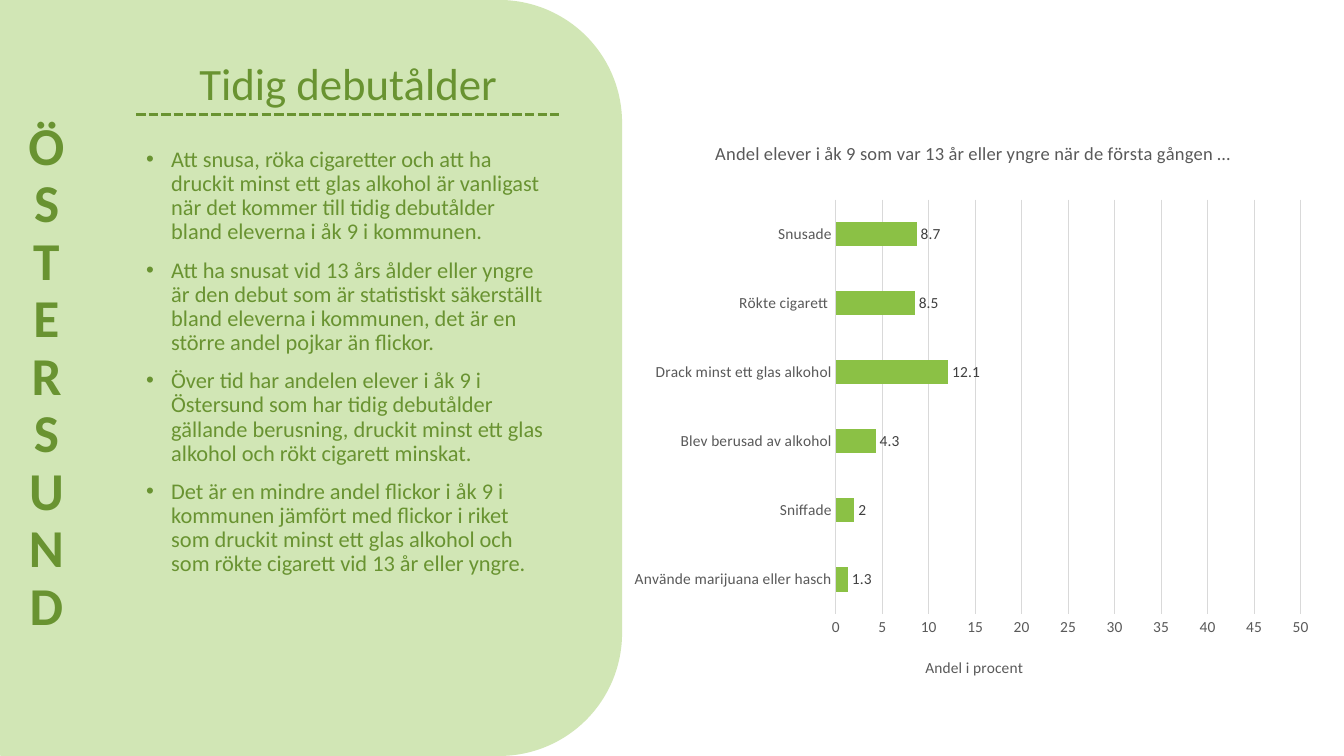
"""Build the slide about early debut age in Östersund."""
from dataclasses import dataclass

import pptx
import pptx.chart.data
import pptx.dml.color
import pptx.enum.chart
import pptx.enum.dml
import pptx.enum.shapes
import pptx.enum.text
import pptx.oxml
import pptx.oxml.ns
import pptx.util
from lxml import etree

PX = 9144
FONT = "Calibri"
COLOURS = {
    "panel": "D1E6B5",
    "text": "699331",
    "bar": "8BC145",
    "axis": "595959",
    "label": "404040",
    "grid": "D9D9D9",
}
BULLETS = [
    "Att snusa, röka cigaretter och att ha druckit minst ett glas alkohol är vanligast "
    "när det kommer till tidig debutålder bland eleverna i åk 9 i kommunen.",
    "Att ha snusat vid 13 års ålder eller yngre är den debut som är statistiskt säkerställt "
    "bland eleverna i kommunen, det är en större andel pojkar än flickor.",
    "Över tid har andelen elever i åk 9 i Östersund som har tidig debutålder gällande "
    "berusning, druckit minst ett glas alkohol och rökt cigarett minskat.",
    "Det är en mindre andel flickor i åk 9 i kommunen jämfört med flickor i riket som "
    "druckit minst ett glas alkohol och som rökte cigarett vid 13 år eller yngre.",
]
DEBUTS = {
    "Använde marijuana eller hasch": 1.3,
    "Sniffade": 2,
    "Blev berusad av alkohol": 4.3,
    "Drack minst ett glas alkohol": 12.1,
    "Rökte cigarett ": 8.5,
    "Snusade": 8.7,
}


@dataclass(frozen=True)
class Area:
    """A rectangle in px."""

    left: int
    top: int
    width: int = 0
    height: int = 0

    def emu(self) -> tuple[int, ...]:
        """Return left, top, width and height in EMU."""
        return tuple(n * PX for n in (self.left, self.top, self.width, self.height))


PANEL = Area(-114, 0, 731, 750)
TITLE = Area(158, 16, 375, 98)
BODY = Area(135, 142, 421, 519)
TOWN = Area(0, 6, 92, 738)
CHART = Area(616, 114, 697, 574)
PLOT = Area(829, 198, 461, 411)
CHART_TITLE = Area(706, 136)
AXIS_TITLE = Area(915, 649)


def colour(name: str) -> pptx.dml.color.RGBColor:
    """Look up a named colour."""
    return pptx.dml.color.RGBColor.from_string(COLOURS[name])


def style_font(font, size: float, name: str, bold: bool = False) -> None:
    """Set face, size, colour and weight."""
    font.name = FONT
    font.size = pptx.util.Pt(size)
    font.bold = bold
    font.color.rgb = colour(name)


def write(para, text: str, size: float, name: str, bold: bool = False) -> None:
    """Add one styled run to a paragraph."""
    span = para.add_run()
    span.text = text
    style_font(span.font, size, name, bold)


def add_panel(page) -> None:
    """Draw the rounded green panel behind the title."""
    panel = page.shapes.add_shape(pptx.enum.shapes.MSO_SHAPE.ROUNDED_RECTANGLE, *PANEL.emu())
    panel.shadow.inherit = False
    panel.fill.solid()
    panel.fill.fore_color.rgb = colour("panel")
    panel.line.fill.background()
    page.shapes.title.element.addprevious(panel.element)


def format_title(page) -> None:
    """Place and fill the title placeholder."""
    title = page.shapes.title
    title.left, title.top, title.width, title.height = TITLE.emu()
    frame = title.text_frame
    frame.auto_size = pptx.enum.text.MSO_AUTO_SIZE.NONE
    frame.vertical_anchor = pptx.enum.text.MSO_ANCHOR.BOTTOM
    para = frame.paragraphs[0]
    para.alignment = pptx.enum.text.PP_ALIGN.CENTER
    para.line_spacing = 0.9
    write(para, "Tidig debutålder", 32, "text")


def add_body(page) -> None:
    """Add the bulleted findings."""
    box = page.shapes.add_textbox(*BODY.emu())
    box.fill.solid()
    box.fill.fore_color.rgb = colour("panel")
    frame = box.text_frame
    frame.word_wrap = True
    for index, text in enumerate(BULLETS):
        para = frame.add_paragraph() if index else frame.paragraphs[0]
        para.line_spacing = 0.9
        para.space_before = pptx.util.Pt(10)
        write(para, text, 16, "text")
        properties = para._p.get_or_add_pPr()
        properties.set("marL", str(25 * PX))
        properties.set("indent", str(-25 * PX))
        etree.SubElement(properties, pptx.oxml.ns.qn("a:buFont"), typeface="Arial")
        etree.SubElement(properties, pptx.oxml.ns.qn("a:buChar"), char="•")


def add_town(page) -> None:
    """Add the town name with stacked letters."""
    box = page.shapes.add_textbox(*TOWN.emu())
    frame = box.text_frame
    frame.word_wrap = True
    frame.vertical_anchor = pptx.enum.text.MSO_ANCHOR.BOTTOM
    frame._txBody.bodyPr.set("vert", "wordArtVert")
    para = frame.paragraphs[0]
    para.alignment = pptx.enum.text.PP_ALIGN.CENTER
    para.line_spacing = 0.9
    write(para, "ÖSTERSUND", 38, "text", bold=True)


def place(parent, index: int, area: Area) -> None:
    """Give a chart part a fixed place inside the chart."""
    for old in parent.findall(pptx.oxml.ns.qn("c:layout")):
        parent.remove(old)
    layout = etree.Element(pptx.oxml.ns.qn("c:layout"))
    manual = etree.SubElement(layout, pptx.oxml.ns.qn("c:manualLayout"))
    values = {"xMode": "edge", "yMode": "edge"}
    if area.width:
        values = {"layoutTarget": "inner", **values}
    values["x"] = (area.left - CHART.left) / CHART.width
    values["y"] = (area.top - CHART.top) / CHART.height
    if area.width:
        values["w"] = area.width / CHART.width
        values["h"] = area.height / CHART.height
    for tag, value in values.items():
        etree.SubElement(manual, pptx.oxml.ns.qn(f"c:{tag}"), val=str(value))
    parent.insert(index, layout)


def add_title(owner, text: str, size: float, area: Area) -> None:
    """Title a chart or an axis."""
    title = owner.chart_title if hasattr(owner, "chart_title") else owner.axis_title
    write(title.text_frame.paragraphs[0], text, size, "axis")
    place(title._element, 1, area)


def add_debut_chart(page) -> None:
    """Add the bar chart of early debuts."""
    data = pptx.chart.data.CategoryChartData()
    data.categories = list(DEBUTS)
    data.add_series("Series 1", list(DEBUTS.values()))
    kind = pptx.enum.chart.XL_CHART_TYPE.BAR_CLUSTERED
    chart = page.shapes.add_chart(kind, *CHART.emu(), data).chart
    chart.has_legend = False
    chart.font.name = FONT
    chart.font.size = pptx.util.Pt(11)
    add_title(chart, "Andel elever i åk 9 som var 13 år eller yngre när de första gången …",
              13.2, CHART_TITLE)
    for axis in (chart.category_axis, chart.value_axis):
        axis.major_tick_mark = pptx.enum.chart.XL_TICK_MARK.NONE
        style_font(axis.tick_labels.font, 11, "axis")
    values = chart.value_axis
    values.minimum_scale, values.maximum_scale, values.major_unit = 0, 50, 5
    values.format.line.fill.background()
    for line in (chart.category_axis.format.line, values.major_gridlines.format.line):
        line.color.rgb = colour("grid")
        line.width = pptx.util.Pt(0.75)
    add_title(values, "Andel i procent", 11, AXIS_TITLE)
    place(chart._chartSpace.chart.plotArea, 0, PLOT)
    plot = chart.plots[0]
    plot.gap_width = 182
    plot.vary_by_categories = False
    series = plot.series[0]
    series.format.fill.solid()
    series.format.fill.fore_color.rgb = colour("bar")
    labels = series.data_labels
    labels.show_value = True
    labels.position = pptx.enum.chart.XL_LABEL_POSITION.OUTSIDE_END
    style_font(labels.font, 11, "label")


def add_rule(page) -> None:
    """Draw the dotted rule under the title."""
    ends = (n * PX for n in (BODY.left, 114, BODY.left + BODY.width, 114))
    rule = page.shapes.add_connector(pptx.enum.shapes.MSO_CONNECTOR.STRAIGHT, *ends)
    rule.line.color.rgb = colour("text")
    rule.line.width = pptx.util.Pt(2.25)
    rule.line.dash_style = pptx.enum.dml.MSO_LINE.SQUARE_DOT
    etree.SubElement(rule.element.spPr, pptx.oxml.ns.qn("a:effectLst"))


def main() -> None:
    """Build and save the deck."""
    deck = pptx.Presentation()
    deck.slide_width, deck.slide_height = 1333 * PX, 750 * PX
    page = deck.slides.add_slide(deck.slide_layouts[5])
    for draw in (add_panel, format_title, add_body, add_town, add_debut_chart, add_rule):
        draw(page)
    deck.save("out.pptx")


if __name__ == "__main__":
    main()
